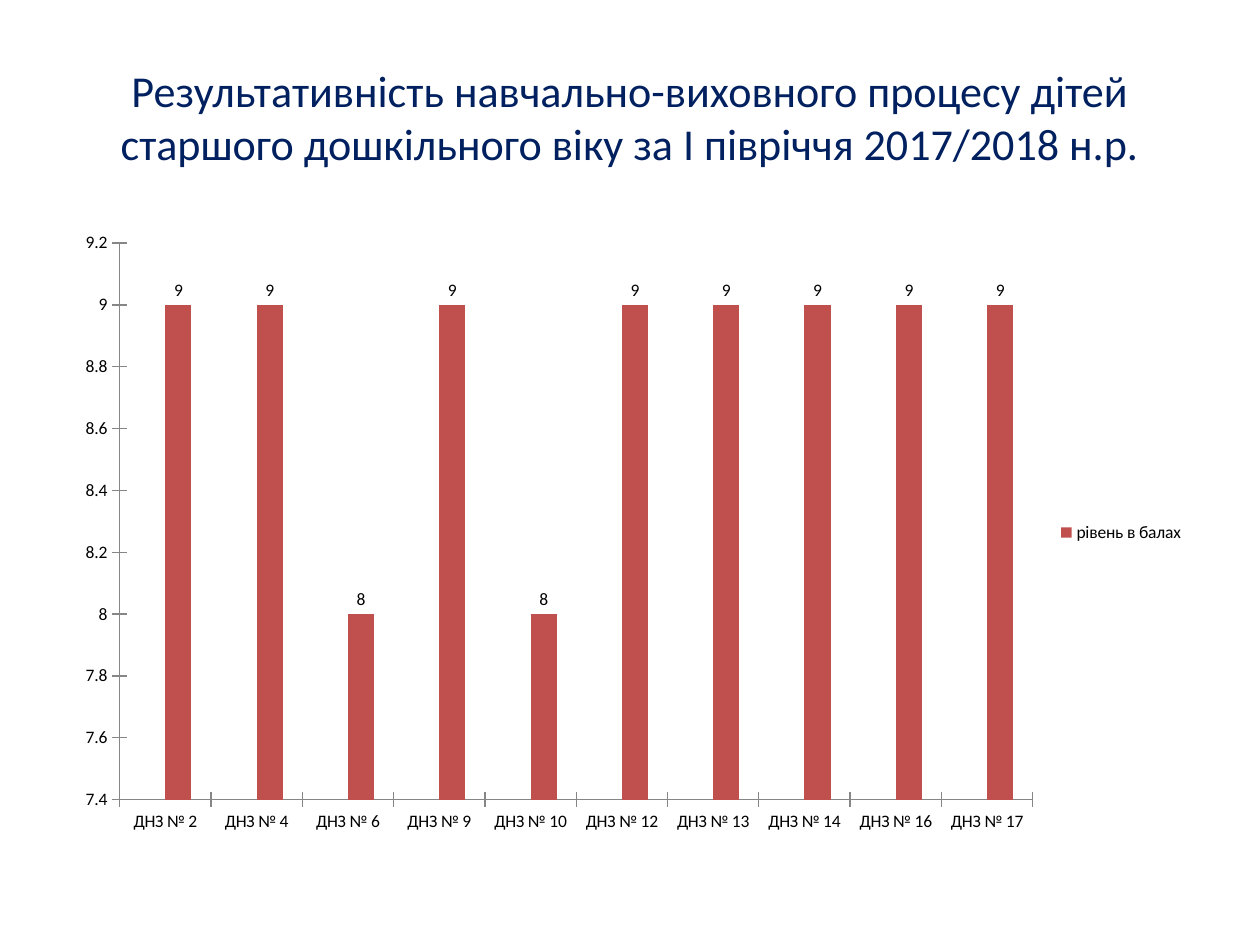
from collections import namedtuple
from dataclasses import dataclass

from lxml import etree
from pptx import Presentation
from pptx.chart.data import CategoryChartData
from pptx.dml.color import RGBColor
from pptx.enum.chart import XL_CHART_TYPE, XL_LABEL_POSITION, XL_LEGEND_POSITION, XL_TICK_MARK
from pptx.enum.text import MSO_ANCHOR, PP_ALIGN
from pptx.oxml.ns import qn
from pptx.util import Cm, Pt

COLUMNS = XL_CHART_TYPE.COLUMN_CLUSTERED
ABOVE = XL_LABEL_POSITION.OUTSIDE_END
RIGHT = XL_LEGEND_POSITION.RIGHT
CROSS = XL_TICK_MARK.CROSS
MIDDLE = MSO_ANCHOR.MIDDLE
CENTER = PP_ALIGN.CENTER

Box = namedtuple("Box", "left top width height")


@dataclass(frozen=True)
class Theme:
    font: str = "Calibri"
    title_size: Pt = Pt(25.2)
    chart_size: Pt = Pt(10)
    title: RGBColor = RGBColor(0x00, 0x20, 0x60)
    text: RGBColor = RGBColor(0x00, 0x00, 0x00)
    axis: RGBColor = RGBColor(0x86, 0x86, 0x86)
    columns: tuple = (RGBColor(0x4F, 0x81, 0xBD), RGBColor(0xC0, 0x50, 0x4D))


THEME = Theme()
TITLE = "Результативність навчально-виховного процесу дітей старшого дошкільного віку за І півріччя 2017/2018 н.р."
SCORES = {2: 9, 4: 9, 6: 8, 9: 9, 10: 8, 12: 9, 13: 9, 14: 9, 16: 9, 17: 9}


def style_font(font, size, color):
    font.name = THEME.font
    font.size = size
    font.color.rgb = color


def place_title(page, box):
    title = page.shapes.title
    title.left, title.top, title.width, title.height = box
    frame = title.text_frame
    frame.text = TITLE
    frame.word_wrap = True
    frame.vertical_anchor = MIDDLE
    para = frame.paragraphs[0]
    para.alignment = CENTER
    style_font(para.runs[0].font, THEME.title_size, THEME.title)


def hide_legend_entry(legend, index):
    entry = etree.Element(qn("c:legendEntry"))
    etree.SubElement(entry, qn("c:idx")).set("val", str(index))
    etree.SubElement(entry, qn("c:delete")).set("val", "1")
    legend._element.find(qn("c:legendPos")).addnext(entry)


def place_score_chart(page, box):
    data = CategoryChartData()
    data.categories = [f"ДНЗ № {number}" for number in SCORES]
    data.add_series("Series 1", [None] * len(SCORES))
    data.add_series("рівень в балах", SCORES.values())
    chart = page.shapes.add_chart(COLUMNS, *box, data).chart
    chart.has_title = False
    style_font(chart.font, THEME.chart_size, THEME.text)

    plot = chart.plots[0]
    plot.vary_by_categories = False
    plot.gap_width = 150
    plot.overlap = 0
    for series, color in zip(plot.series, THEME.columns):
        series.format.fill.solid()
        series.format.fill.fore_color.rgb = color
        series.data_labels.show_value = True
        series.data_labels.position = ABOVE

    for axis in (chart.category_axis, chart.value_axis):
        axis.has_major_gridlines = False
        axis.major_tick_mark = CROSS
        axis.format.line.color.rgb = THEME.axis
    chart.value_axis.minimum_scale = 7.4
    chart.value_axis.maximum_scale = 9.2
    chart.value_axis.major_unit = 0.2

    chart.has_legend = True
    chart.legend.position = RIGHT
    chart.legend.include_in_layout = False
    hide_legend_entry(chart.legend, 0)


def main():
    deck = Presentation()
    deck.slide_width, deck.slide_height = Cm(25.4), Cm(19.05)
    page = deck.slides.add_slide(deck.slide_layouts[5])
    margin, width = Cm(1.27), Cm(22.86)
    place_title(page, Box(margin, Cm(0.76), width, Cm(3.18)))
    place_score_chart(page, Box(margin, Cm(4.45), width, Cm(12.57)))
    deck.save("out.pptx")


if __name__ == "__main__":
    main()
